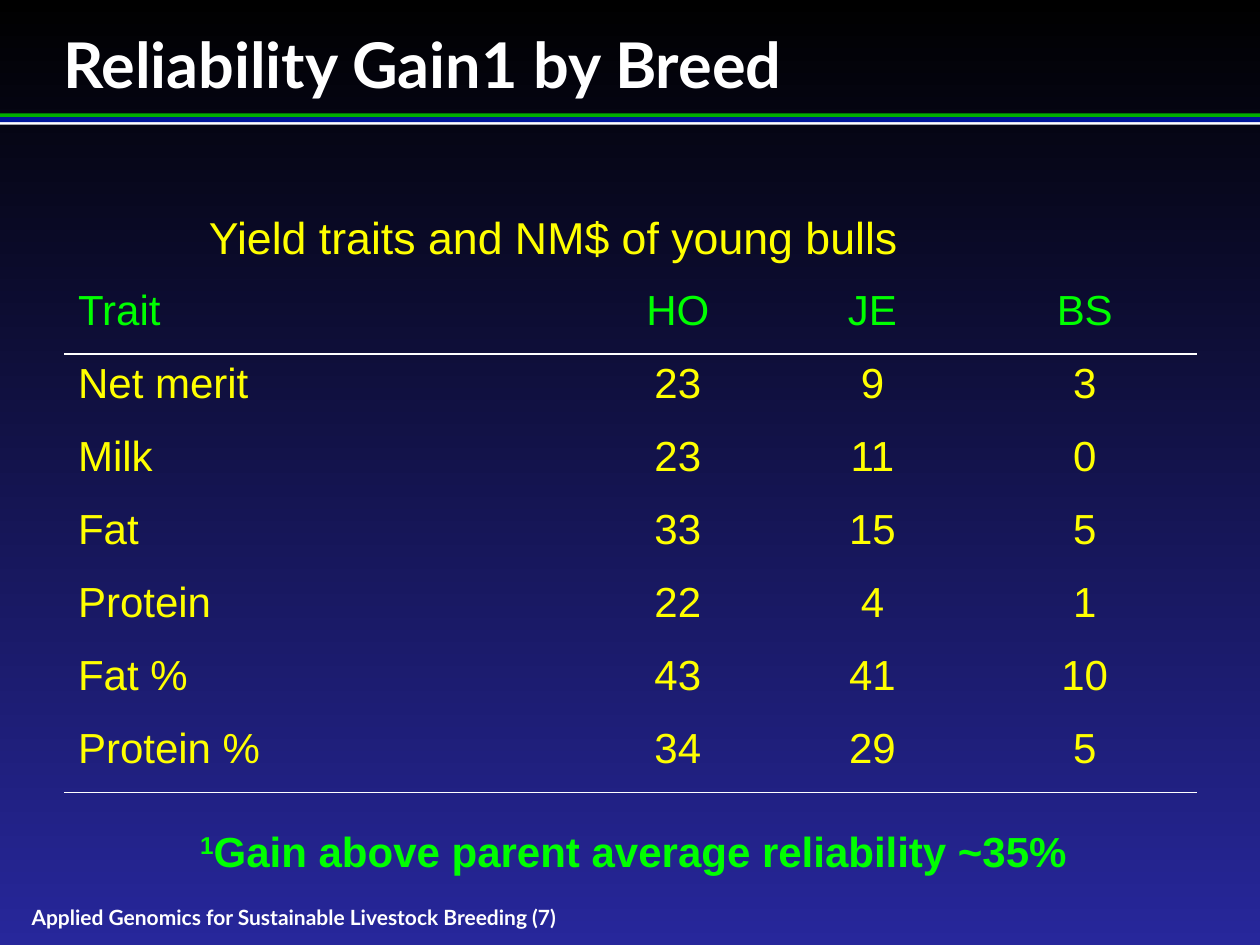
from dataclasses import dataclass

from lxml.etree import SubElement
from pptx import Presentation
from pptx.dml.color import RGBColor
from pptx.enum.shapes import MSO_SHAPE
from pptx.enum.text import MSO_ANCHOR, PP_ALIGN
from pptx.oxml.ns import qn
from pptx.util import Inches, Pt


@dataclass(frozen=True)
class Theme:
    white: str = "FFFFFF"
    yellow: str = "FFFF00"
    green: str = "00FF00"
    stripe_green: str = "01AF00"
    stripe_blue: str = "001799"
    sky_top: str = "000000"
    sky_bottom: str = "27279B"
    heading_font: str = "Lato"
    body_font: str = "Arial"
    title_size: int = 36
    subtitle_size: int = 44
    body_size: int = 24
    footer_size: int = 12


THEME = Theme()

# Content
TITLE = "Reliability Gain1 by Breed"
SUBTITLE = "Yield traits and NM$ of young bulls"
FOOTNOTE = ("1", "Gain above parent average reliability ~35%")
FOOTER = "Applied Genomics for Sustainable Livestock Breeding (7)"
GAINS = [
    ("Trait", "HO", "JE", "BS"),
    ("Net merit", "23", "9", "3"),
    ("Milk", "23", "11", "0"),
    ("Fat", "33", "15", "5"),
    ("Protein", "22", "4", "1"),
    ("Fat %", "43", "41", "10"),
    ("Protein %", "34", "29", "5"),
]

# Layout, in inches
SLIDE_W, SLIDE_H = 10, 7.5
COLUMN_WIDTHS = (4.12, 1.5, 1.59, 1.78)
ROW_HEIGHT = 0.58
TABLE_LEFT, TABLE_TOP = 0.51, 2.23
STRIPES = [(0.9, 0.03, THEME.stripe_green),
           (0.96, 0.03, THEME.white),
           (0.93, 0.04, THEME.stripe_blue)]


def add_run(paragraph, text, size, color, font, bold=False, baseline=0):
    run = paragraph.add_run()
    run.text = text
    run.font.size = Pt(size)
    run.font.name = font
    run.font.bold = bold
    run.font.color.rgb = RGBColor.from_string(color)
    if baseline:
        run.font._element.set("baseline", str(baseline * 1000))


def add_label(slide, box, wrap=False, inset=True):
    label = slide.shapes.add_textbox(*map(Inches, box))
    frame = label.text_frame
    frame.word_wrap = wrap
    if not inset:
        clear_insets(frame)
    return frame


def clear_insets(frame):
    frame.margin_left = frame.margin_right = 0
    frame.margin_top = frame.margin_bottom = 0


def set_borders(cell, ruled_edges):
    props = cell._tc.get_or_add_tcPr()
    for edge in ("lnL", "lnR", "lnT", "lnB"):
        line = SubElement(props, qn(f"a:{edge}"), w=str(Pt(1)))
        if edge in ruled_edges:
            fill = SubElement(line, qn("a:solidFill"))
            SubElement(fill, qn("a:srgbClr"), val=THEME.white)
        else:
            SubElement(line, qn("a:noFill"))


def add_gains_table(slide):
    row_count = len(GAINS)
    table = slide.shapes.add_table(
        row_count, len(COLUMN_WIDTHS), Inches(TABLE_LEFT), Inches(TABLE_TOP),
        Inches(sum(COLUMN_WIDTHS)), Inches(ROW_HEIGHT * row_count)).table
    table.first_row = table.horz_banding = False
    for column, width in zip(table.columns, COLUMN_WIDTHS):
        column.width = Inches(width)
    for r, gains in enumerate(GAINS):
        table.rows[r].height = Inches(ROW_HEIGHT)
        color = THEME.yellow if r else THEME.green
        # Rules lie under the header and under the last row
        ruled_edges = {0: ("lnB",), 1: ("lnT",), row_count - 1: ("lnB",)}.get(r, ())
        for c, value in enumerate(gains):
            cell = table.cell(r, c)
            cell.margin_left = cell.margin_right = Inches(0.11)
            set_borders(cell, ruled_edges)
            cell.fill.background()
            paragraph = cell.text_frame.paragraphs[0]
            paragraph.alignment = PP_ALIGN.CENTER if c else PP_ALIGN.LEFT
            add_run(paragraph, value, THEME.body_size, color, THEME.body_font)


def main():
    deck = Presentation()
    deck.slide_width, deck.slide_height = Inches(SLIDE_W), Inches(SLIDE_H)
    slide = deck.slides.add_slide(deck.slide_layouts[5])

    # Background
    sky = slide.background.fill
    sky.gradient()
    sky.gradient_angle = 270
    for stop, color in zip(sky.gradient_stops, (THEME.sky_top, THEME.sky_bottom)):
        stop.color.rgb = RGBColor.from_string(color)

    # Stripes under the title
    for top, height, color in STRIPES:
        stripe = slide.shapes.add_shape(
            MSO_SHAPE.RECTANGLE, 0, Inches(top), Inches(SLIDE_W), Inches(height))
        stripe.shadow.inherit = False
        stripe.fill.solid()
        stripe.fill.fore_color.rgb = RGBColor.from_string(color)
        stripe.line.fill.background()

    # Footer
    footer = add_label(slide, (0.25, 7.18, 5.22, 0.2), wrap=True, inset=False)
    footer.vertical_anchor = MSO_ANCHOR.MIDDLE
    add_run(footer.paragraphs[0], FOOTER, THEME.footer_size, THEME.white,
            THEME.heading_font, bold=True)

    # Title
    title = slide.shapes.title
    title.left, title.top, title.width, title.height = map(Inches, (0.5, 0.2, 9, 0.6))
    heading = title.text_frame
    clear_insets(heading)
    heading.vertical_anchor = MSO_ANCHOR.TOP
    heading.paragraphs[0].alignment = PP_ALIGN.LEFT
    add_run(heading.paragraphs[0], TITLE, THEME.title_size, THEME.white,
            THEME.heading_font, bold=True)

    add_gains_table(slide)

    # Footnote with raised mark
    footnote = add_label(slide, (1.49, 6.5, 7.09, 0.5)).paragraphs[0]
    for text, baseline in zip(FOOTNOTE, (30, 0)):
        add_run(footnote, text, THEME.body_size, THEME.green, THEME.body_font,
                bold=True, baseline=baseline)

    # Subtitle above the table
    subtitle = add_label(slide, (1.56, 1.21, 6.55, 0.59)).paragraphs[0]
    add_run(subtitle, SUBTITLE, THEME.subtitle_size, THEME.yellow,
            THEME.body_font, baseline=-25)

    deck.save("out.pptx")


if __name__ == "__main__":
    main()
